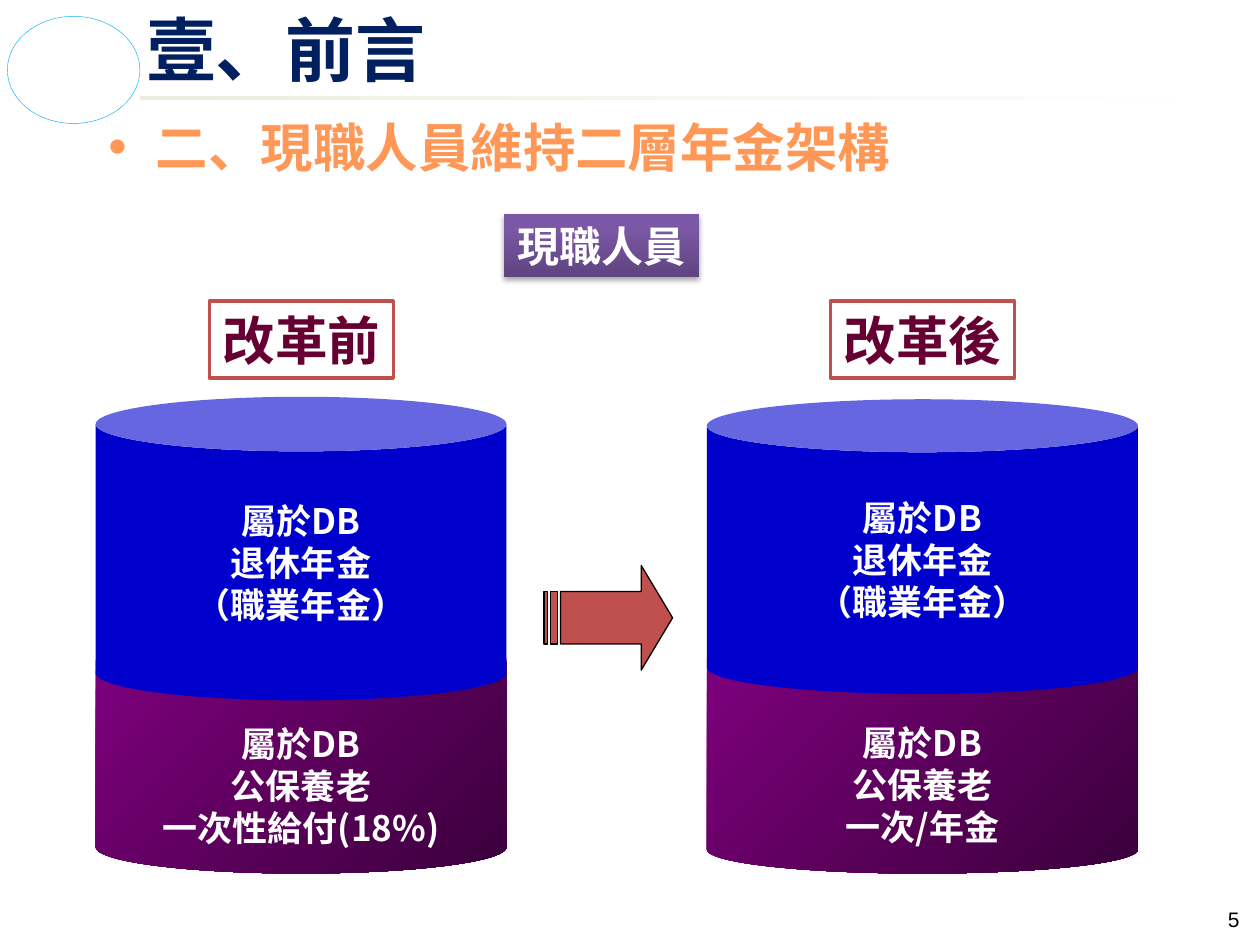
import pptx
import pptx.dml.color
import pptx.enum.shapes
import pptx.enum.text
import pptx.oxml.ns
import pptx.util
from lxml import etree

Cm = pptx.util.Cm
Pt = pptx.util.Pt
RGB = pptx.dml.color.RGBColor.from_string
SHAPE = pptx.enum.shapes.MSO_SHAPE
ALIGN = pptx.enum.text.PP_ALIGN

COLORS = {
    "navy": "002060", "orange": "FF9856", "sky": "00B0F0", "beige": "EEECE1",
    "white": "FFFFFF", "black": "000000", "red": "C0504D", "maroon": "660033",
    "blue": "0000CC", "plum": "800080", "dark plum": "3B003B",
    "deep violet": "5F4480", "violet": "7B58A6",
}
CJK = "Noto Sans CJK SC"


def write(shape, lines, size, color, font=CJK, align=ALIGN.CENTER, bold=True, wrap=False):
    """Fill a shape with one paragraph per line, vertically centred."""
    frame = shape.text_frame
    frame.text = "\n".join(lines)
    frame.word_wrap = wrap
    frame.auto_size = pptx.enum.text.MSO_AUTO_SIZE.NONE
    frame.vertical_anchor = pptx.enum.text.MSO_ANCHOR.MIDDLE
    for para in frame.paragraphs:
        para.alignment = align
        para.space_before = Pt(0)
        if len(lines) > 1:
            para.line_spacing = Pt(size * 1.2)
        para.font.size = Pt(size)
        para.font.bold = bold
        para.font.name = font
        para.font.color.rgb = RGB(COLORS[color])
        # East Asian characters take their own typeface element
        etree.SubElement(para.font._element, pptx.oxml.ns.qn("a:ea"), typeface=font)


def add_shape(kind, box, fill=None, angle=0, line=None, width=1, shadow=False):
    """Add a preset shape; fill is a colour name or a pair for a gradient."""
    shape = page.shapes.add_shape(kind, *[Cm(value) for value in box])
    if not shadow:
        shape.shadow.inherit = False
    if fill is None:
        shape.fill.background()
    elif isinstance(fill, tuple):
        shape.fill.gradient()
        shape.fill.gradient_angle = angle
        for stop, name in zip(shape.fill.gradient_stops, fill):
            stop.color.rgb = RGB(COLORS[name])
    else:
        shape.fill.solid()
        shape.fill.fore_color.rgb = RGB(COLORS[fill])
    if line:
        shape.line.color.rgb = RGB(COLORS[line])
        shape.line.width = Pt(width)
    else:
        shape.line.fill.background()
    return shape


deck = pptx.Presentation()
deck.slide_width, deck.slide_height = Cm(25.4), Cm(19.05)
page = deck.slides.add_slide(deck.slide_layouts[1])

# Header decoration
add_shape(SHAPE.RECTANGLE, (2.82, 1.93, 22.28, 0.08), ("beige", "white"))
add_shape(SHAPE.OVAL, (0.15, 0.33, 2.67, 2.16), line="sky", width=0.25)

# Title and subtitle
title = page.shapes.title
title.left, title.top, title.width, title.height = Cm(2.69), Cm(0.08), Cm(21.82), Cm(1.8)
write(title, ["壹、前言"], 40, "navy", align=ALIGN.LEFT, wrap=True)

subtitle = page.placeholders[1]
subtitle.left, subtitle.top, subtitle.width, subtitle.height = Cm(1.93), Cm(2.13), Cm(22.05), Cm(1.63)
properties = subtitle.text_frame.paragraphs[0]._p.get_or_add_pPr()
properties.set("marL", "0")
properties.set("indent", "0")
etree.SubElement(properties, pptx.oxml.ns.qn("a:buNone"))
write(subtitle, ["二、現職人員維持二層年金架構"], 30, "orange", align=ALIGN.LEFT, wrap=True)

# Group heading, which keeps the theme shadow
heading = add_shape(SHAPE.RECTANGLE, (10.16, 4.32, 3.94, 1.27),
                    ("deep violet", "violet"), angle=90, shadow=True)
heading.fill.gradient_stops[1].position = 0.8
write(heading, ["現職人員"], 24, "white", font="Calibri")

# Before and after: label, lower can, upper can
# label, label left, can left, can width, lower adj, upper top, upper height, benefit
columns = [
    ("改革前", 4.22, 1.93, 8.28, 0.22, 8.0, 6.12, "一次性給付(18%)"),
    ("改革後", 16.74, 14.25, 8.69, 0.2, 8.05, 5.94, "一次/年金"),
]
for name, label_left, left, width, adjust, top, height, benefit in columns:
    label = add_shape(SHAPE.RECTANGLE, (label_left, 6.07, 3.71, 1.55), "white", line="red", width=2)
    write(label, [name], 30, "maroon", font="Calibri")

    lower = add_shape(SHAPE.CAN, (left, 12.78, width, 4.83), ("plum", "dark plum"), angle=315)
    lower.adjustments[0] = adjust
    write(lower, ["屬於DB", "公保養老", benefit], 20, "white")
    lower.text_frame.margin_top, lower.text_frame.margin_bottom = Cm(0.76), Cm(0)

    upper = add_shape(SHAPE.CAN, (left, top, width, height), "blue")
    upper.adjustments[0] = 0.18
    write(upper, ["屬於DB", "退休年金", "（職業年金）"], 20, "white")

# Arrow between the columns
arrow = add_shape(SHAPE.STRIPED_RIGHT_ARROW, (10.97, 11.4, 2.59, 2.11), "red", line="black", width=0.75)
arrow.adjustments[0], arrow.adjustments[1] = 0.5, 0.3

# Page number
number = page.shapes.add_textbox(Cm(24.1), Cm(18.08), Cm(1.14), Cm(0.91))
write(number, ["5"], 12, "black", font="Arial", align=ALIGN.RIGHT, bold=False, wrap=True)

deck.save("out.pptx")
